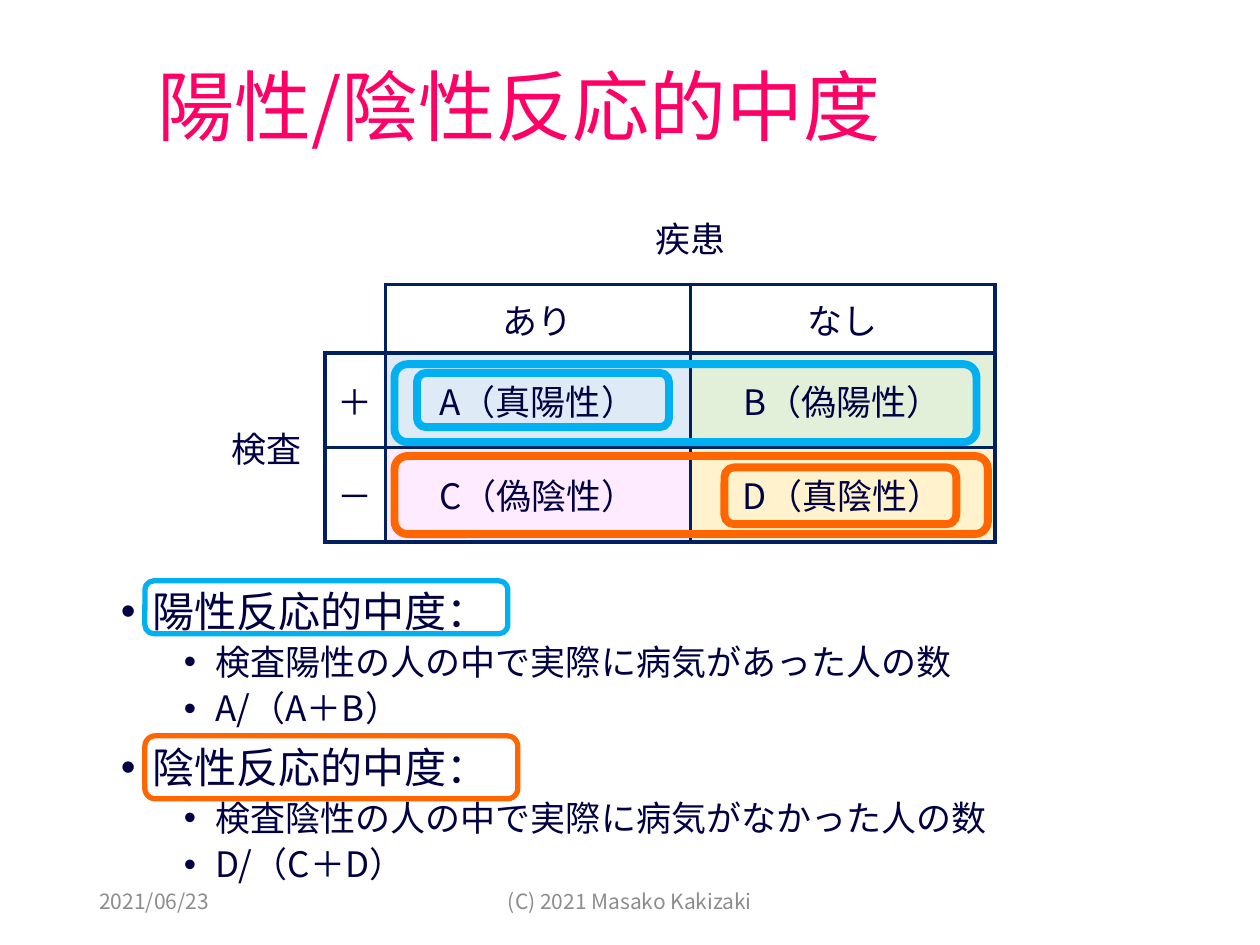
from dataclasses import dataclass
from typing import NamedTuple

from lxml import etree
from pptx import Presentation
from pptx import util as u
from pptx.dml.color import RGBColor
from pptx.enum import shapes, text
from pptx.oxml.ns import qn

Pt = u.Pt
LEFT, CENTER = text.PP_ALIGN.LEFT, text.PP_ALIGN.CENTER
MIDDLE, TOP = text.MSO_ANCHOR.MIDDLE, text.MSO_ANCHOR.TOP


@dataclass(frozen=True)
class Theme:
    font: str = "Noto Sans CJK JP"
    title: str = "FF0066"
    ink: str = "000042"
    muted: str = "8C8C8C"
    grid: str = "002060"
    positive: str = "00B0F0"
    negative: str = "FF6600"
    title_size: float = 44
    head_size: float = 24
    text_size: float = 20
    footer_size: float = 12
    grid_width: float = 2.25


class Box(NamedTuple):
    left: float
    top: float
    width: float
    height: float


class Frame(NamedTuple):
    box: Box
    color: str
    weight: float


class Entry(NamedTuple):
    row: int
    col: int
    words: str
    fill: str = ""
    align: text.PP_ALIGN = CENTER


THEME = Theme()

COLUMNS = [58.3, 34.6, 174.2, 174.2]
ROWS = [54, 38.9, 54, 54]
ENTRIES = [
    Entry(0, 2, "疾患"),
    Entry(1, 2, "あり"),
    Entry(1, 3, "なし"),
    Entry(2, 0, "検査", align=LEFT),
    Entry(2, 1, "＋"),
    Entry(2, 2, "A（真陽性）", "DEEBF7"),
    Entry(2, 3, "B（偽陽性）", "E2F0D9"),
    Entry(3, 1, "－"),
    Entry(3, 2, "C（偽陰性）", "FFEBFF"),
    Entry(3, 3, "D（真陰性）", "FFF2CC"),
]
DEFINITIONS = [
    (0, "陽性反応的中度："),
    (1, "検査陽性の人の中で実際に病気があった人の数"),
    (1, "A/（A＋B）"),
    (0, "陰性反応的中度："),
    (1, "検査陰性の人の中で実際に病気がなかった人の数"),
    (1, "D/（C＋D）"),
]
FRAMES = [
    Frame(Box(225.4, 208.1, 332.6, 44.6), THEME.positive, 4.5),
    Frame(Box(238.3, 213.1, 144, 31), THEME.positive, 4.5),
    Frame(Box(82.8, 331.9, 207.4, 30.2), THEME.positive, 3),
    Frame(Box(225.4, 260.6, 339.1, 44.6), THEME.negative, 4.5),
    Frame(Box(414, 267.1, 132.5, 32.4), THEME.negative, 4.5),
    Frame(Box(82.8, 420.5, 213.1, 36), THEME.negative, 3),
]
FOOTERS = [
    (Box(49.7, 500.4, 162, 28.8), "2021/06/23", LEFT),
    (Box(238.3, 500.4, 243.4, 28.8), "(C) 2021 Masako Kakizaki", CENTER),
]


def apply(target: object, formats: dict) -> None:
    for attribute, value in formats.items():
        setattr(target, attribute, value)


def place(shape, box: Box) -> None:
    apply(shape, {side: Pt(value) for side, value in box._asdict().items()})


def write(paragraph, words: str, size: float, color: str, **formats) -> None:
    apply(paragraph, formats)
    run = paragraph.add_run()
    run.text = words
    apply(run.font, {"size": Pt(size), "name": THEME.font, "bold": False})
    run.font.color.rgb = RGBColor.from_string(color)
    east_asian = etree.SubElement(run._r.get_or_add_rPr(), qn("a:ea"))
    east_asian.set("typeface", THEME.font)


def set_frame(frame, anchor: text.MSO_ANCHOR) -> None:
    apply(frame, {"word_wrap": True, "auto_size": text.MSO_AUTO_SIZE.NONE,
                  "vertical_anchor": anchor})


def set_bullet(paragraph, level: int) -> None:
    properties = paragraph._p.get_or_add_pPr()
    properties.set("marL", str(Pt(18 + 36 * level)))
    properties.set("indent", str(Pt(-18)))
    etree.SubElement(properties, qn("a:buFont")).set("typeface", "Arial")
    etree.SubElement(properties, qn("a:buChar")).set("char", "•")


def is_boxed(row: int, col: int) -> bool:
    inside = 0 <= row < len(ROWS) and 0 <= col < len(COLUMNS)
    return inside and ((row >= 1 and col >= 2) or (row >= 2 and col >= 1))


def draw_borders(cell, row: int, col: int) -> None:
    neighbours = {"a:lnL": (row, col - 1), "a:lnR": (row, col + 1),
                  "a:lnT": (row - 1, col), "a:lnB": (row + 1, col)}
    for edge, neighbour in neighbours.items():
        if is_boxed(row, col) or is_boxed(*neighbour):
            line = etree.SubElement(cell._tc.get_or_add_tcPr(), qn(edge))
            line.set("w", str(Pt(THEME.grid_width)))
            fill = etree.SubElement(line, qn("a:solidFill"))
            etree.SubElement(fill, qn("a:srgbClr")).set("val", THEME.grid)


def draw_table(slide) -> None:
    box = Box(127.4, 108.7, sum(COLUMNS), sum(ROWS))
    table = slide.shapes.add_table(len(ROWS), len(COLUMNS), *map(Pt, box)).table
    apply(table, {"first_row": False, "horz_banding": False})
    # Plain style without grid
    style = table._tbl.tblPr.find(qn("a:tableStyleId"))
    style.text = "{2D5ABB26-0587-4C30-8999-92F81FD0307C}"
    for column, width in zip(table.columns, COLUMNS):
        column.width = Pt(width)
    for index, height in enumerate(ROWS):
        table.rows[index].height = Pt(height)
    table.cell(0, 2).merge(table.cell(0, 3))
    table.cell(2, 0).merge(table.cell(3, 0))
    for row in range(len(ROWS)):
        for col in range(len(COLUMNS)):
            cell = table.cell(row, col)
            draw_borders(cell, row, col)
            cell.fill.background()
    for entry in ENTRIES:
        cell = table.cell(entry.row, entry.col)
        apply(cell, {"vertical_anchor": MIDDLE, "margin_left": Pt(5), "margin_right": Pt(5),
                     "margin_top": Pt(3), "margin_bottom": Pt(3)})
        write(cell.text_frame.paragraphs[0], entry.words, THEME.text_size, THEME.ink,
              alignment=entry.align)
        if entry.fill:
            cell.fill.solid()
            cell.fill.fore_color.rgb = RGBColor.from_string(entry.fill)


def draw_definitions(body) -> None:
    place(body, Box(61.9, 334.1, 614.2, 199.4))
    set_frame(body.text_frame, TOP)
    for index, (level, words) in enumerate(DEFINITIONS):
        paragraph = body.text_frame.add_paragraph() if index else body.text_frame.paragraphs[0]
        write(paragraph, words, THEME.text_size if level else THEME.head_size, THEME.ink,
              level=level, line_spacing=0.9, space_before=Pt(5 if level else 10))
        set_bullet(paragraph, level)


def draw_frame(slide, frame: Frame) -> None:
    outline = slide.shapes.add_shape(shapes.MSO_SHAPE.ROUNDED_RECTANGLE, *map(Pt, frame.box))
    outline.shadow.inherit = False
    outline.fill.background()
    outline.line.color.rgb = RGBColor.from_string(frame.color)
    outline.line.width = Pt(frame.weight)


def main() -> None:
    deck = Presentation()
    apply(deck, {"slide_width": Pt(720), "slide_height": Pt(540)})
    slide = deck.slides.add_slide(deck.slide_layouts[1])
    heading, body = slide.placeholders

    # Title
    place(heading, Box(82.8, 29.5, 554.4, 67.7))
    set_frame(heading.text_frame, MIDDLE)
    write(heading.text_frame.paragraphs[0], "陽性/陰性反応的中度", THEME.title_size,
          THEME.title, alignment=LEFT, line_spacing=0.9)

    # Test result by disease, then the definitions
    draw_table(slide)
    draw_definitions(body)

    # Highlights
    for frame in FRAMES:
        draw_frame(slide, frame)

    # Date and copyright
    for box, words, align in FOOTERS:
        footer = slide.shapes.add_textbox(*map(Pt, box)).text_frame
        set_frame(footer, MIDDLE)
        write(footer.paragraphs[0], words, THEME.footer_size, THEME.muted, alignment=align)

    deck.save("out.pptx")


if __name__ == "__main__":
    main()
